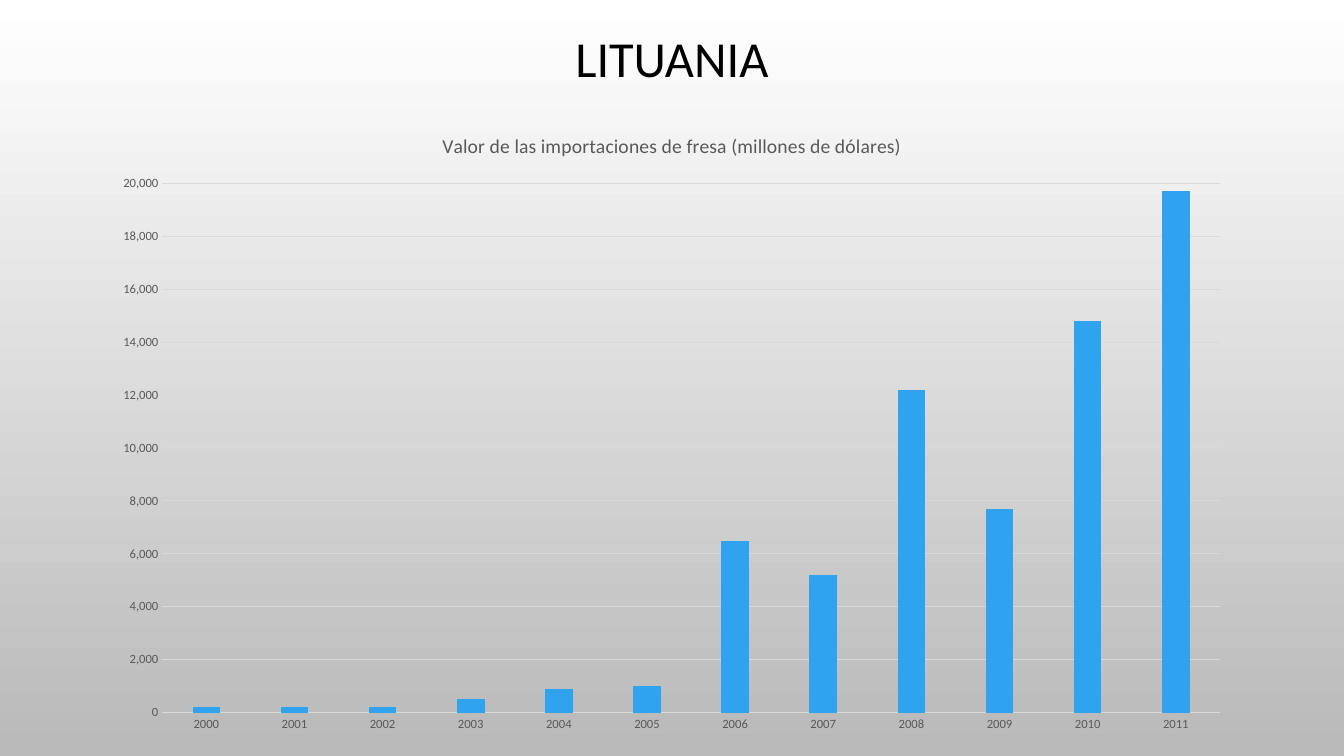
import dataclasses

import lxml.etree
import pptx
import pptx.chart.data
import pptx.dml.color
import pptx.enum.chart
import pptx.enum.text
import pptx.oxml
import pptx.oxml.ns
import pptx.util

COLORS = {
    "black": "000000",
    "text": "595959",
    "line": "D9D9D9",
    "bar": "2FA3EE",
    "bg_top": "FFFFFF",
    "bg_bottom": "B9B9B9",
}
FONT = "Calibri"


@dataclasses.dataclass(frozen=True)
class Box:
    left: float
    top: float
    width: float
    height: float


@dataclasses.dataclass(frozen=True)
class Imports:
    year: int
    value: int


TITLE_BOX = Box(1, 0.11, 11.33, 0.99)
CHART_BOX = Box(1, 1.1, 11.33, 6.28)
PLOT_BOX = Box(1.61, 1.82, 10.49, 5.25)
VALUES = [200, 200, 200, 500, 900, 1000, 6500, 5200, 12200, 7700, 14800, 19700]
IMPORTS = [Imports(year, value) for year, value in enumerate(VALUES, 2000)]


def rgb(name: str) -> pptx.dml.color.RGBColor:
    return pptx.dml.color.RGBColor.from_string(COLORS[name])


def format_font(font, size: float, color: str) -> None:
    values = {"name": FONT, "size": pptx.util.Pt(size), "bold": False}
    for name, value in values.items():
        setattr(font, name, value)
    font.color.rgb = rgb(color)


def format_line(line) -> None:
    line.color.rgb = rgb("line")
    line.width = pptx.util.Pt(0.75)


def set_background(slide) -> None:
    fill = slide.background.fill
    fill.gradient()
    fill.gradient_angle = 270
    for stop, position, color in zip(fill.gradient_stops, (0, 1), ("bg_top", "bg_bottom")):
        stop.position = position
        stop.color.rgb = rgb(color)


def add_title(slide, text: str) -> None:
    sp = slide.shapes.title
    for name, value in dataclasses.asdict(TITLE_BOX).items():
        setattr(sp, name, pptx.util.Inches(value))
    tf = sp.text_frame
    tf.vertical_anchor = pptx.enum.text.MSO_ANCHOR.MIDDLE
    p = tf.paragraphs[0]
    p.alignment = pptx.enum.text.PP_ALIGN.CENTER
    p.line_spacing = 0.9
    r = p.add_run()
    r.text = text
    format_font(r.font, 36, "black")


def place_plot_area(chart) -> None:
    """Fix the inner plot area as fractions of the chart frame."""
    plot_area = chart.plots[0]._element.getparent()
    qn = pptx.oxml.ns.qn
    for old in plot_area.findall(qn("c:layout")):
        plot_area.remove(old)
    layout = lxml.etree.Element(qn("c:layout"))
    manual = lxml.etree.SubElement(layout, qn("c:manualLayout"))
    settings = {
        "layoutTarget": "inner",
        "xMode": "edge",
        "yMode": "edge",
        "x": (PLOT_BOX.left - CHART_BOX.left) / CHART_BOX.width,
        "y": (PLOT_BOX.top - CHART_BOX.top) / CHART_BOX.height,
        "w": PLOT_BOX.width / CHART_BOX.width,
        "h": PLOT_BOX.height / CHART_BOX.height,
    }
    for tag, value in settings.items():
        lxml.etree.SubElement(manual, qn(f"c:{tag}"), val=str(value))
    plot_area.insert(0, layout)


def add_imports_chart(slide, title: str) -> None:
    data = pptx.chart.data.CategoryChartData(number_format="#,##0")
    data.categories = [str(item.year) for item in IMPORTS]
    data.add_series("Series 1", [item.value for item in IMPORTS])
    box = [pptx.util.Inches(value) for value in dataclasses.astuple(CHART_BOX)]
    chart = slide.shapes.add_chart(
        pptx.enum.chart.XL_CHART_TYPE.COLUMN_CLUSTERED, *box, data
    ).chart
    format_font(chart.font, 10, "black")
    chart.has_legend = False
    chart.has_title = True
    p = chart.chart_title.text_frame.paragraphs[0]
    r = p.add_run()
    r.text = title
    format_font(r.font, 14, "text")
    chart.chart_title.include_in_layout = False

    plot = chart.plots[0]
    for name, value in {"gap_width": 219, "overlap": -27, "vary_by_categories": False}.items():
        setattr(plot, name, value)
    fill = plot.series[0].format.fill
    fill.solid()
    fill.fore_color.rgb = rgb("bar")

    for axis in (chart.category_axis, chart.value_axis):
        axis.major_tick_mark = pptx.enum.chart.XL_TICK_MARK.NONE
        axis.minor_tick_mark = pptx.enum.chart.XL_TICK_MARK.NONE
        format_font(axis.tick_labels.font, 9, "text")
    format_line(chart.category_axis.format.line)
    axis = chart.value_axis
    for name, value in {"minimum_scale": 0, "maximum_scale": 20000, "major_unit": 2000}.items():
        setattr(axis, name, value)
    axis.tick_labels.number_format = "#,##0"
    axis.tick_labels.number_format_is_linked = False
    axis.format.line.fill.background()
    axis.has_major_gridlines = True
    format_line(axis.major_gridlines.format.line)
    place_plot_area(chart)


def main() -> None:
    prs = pptx.Presentation()
    prs.slide_width = pptx.util.Inches(13.33)
    prs.slide_height = pptx.util.Inches(7.5)
    slide = prs.slides.add_slide(prs.slide_layouts.get_by_name("Title Only"))
    set_background(slide)
    add_title(slide, "LITUANIA")
    add_imports_chart(slide, "Valor de las importaciones de fresa (millones de dólares)")
    prs.save("out.pptx")


if __name__ == "__main__":
    main()
